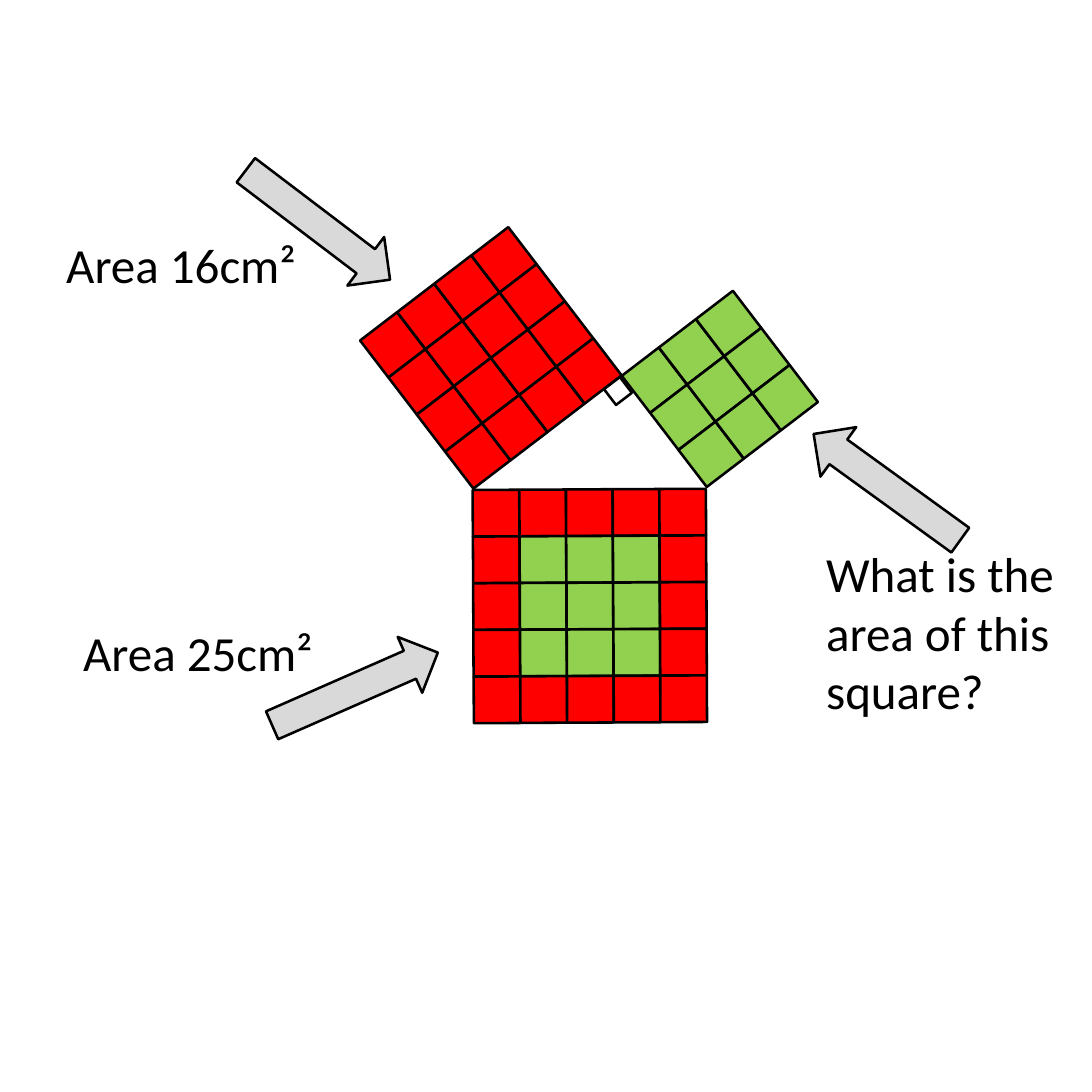
from math import cos, radians, sin

from pptx import Presentation
from pptx.dml.color import RGBColor
from pptx.enum.shapes import MSO_SHAPE
from pptx.enum.text import MSO_AUTO_SIZE
from pptx.util import Pt

PX = 4948  # EMU in one px
SLIDE_SIDE = 1092
CELL = 140 / 3  # the three-cell square is 140 px wide
MARKER = 20
ARROW_LENGTH, ARROW_WIDTH = 181, 61

RED = RGBColor(0xFF, 0x00, 0x00)
GREEN = RGBColor(0x92, 0xD0, 0x50)
GREY = RGBColor(0xD9, 0xD9, 0xD9)
BLACK = RGBColor(0x00, 0x00, 0x00)


def px(length):
    return round(length * PX)


def add_centred(shapes, kind, centre_x, centre_y, width, height, rotation, fill=None):
    """Add a black-outlined shape, turned about its centre."""
    shape = shapes.add_shape(kind, px(centre_x - width / 2), px(centre_y - height / 2),
                             px(width), px(height))
    shape.rotation = rotation
    shape.shadow.inherit = False
    if fill is None:
        shape.fill.background()
    else:
        shape.fill.solid()
        shape.fill.fore_color.rgb = fill
    shape.line.color.rgb = BLACK
    shape.line.width = Pt(1)


presentation = Presentation()
presentation.slide_width = presentation.slide_height = px(SLIDE_SIDE)
slide = presentation.slides.add_slide(presentation.slide_layouts[6])

# Squares on the sides of the triangle: centre, cells per side, tilt, rim and core colours
squares = [
    (720, 389, 3, -37.4, GREEN, GREEN),
    (491, 358, 4, -37.4, RED, RED),
    (590, 606, 5, -0.3, RED, GREEN),
]
diagram = slide.shapes.add_group_shape()
for centre_x, centre_y, count, tilt, rim, core in squares:
    cosine, sine = cos(radians(tilt)), sin(radians(tilt))
    for row in range(count):
        for column in range(count):
            across = (column - (count - 1) / 2) * CELL
            down = (row - (count - 1) / 2) * CELL
            on_rim = row in (0, count - 1) or column in (0, count - 1)
            add_centred(diagram.shapes, MSO_SHAPE.RECTANGLE,
                        centre_x + across * cosine - down * sine,
                        centre_y + across * sine + down * cosine,
                        CELL, CELL, tilt, rim if on_rim else core)

# Right-angle marker
add_centred(diagram.shapes, MSO_SHAPE.RECTANGLE, 618, 391, MARKER, MARKER, -37.4)

# Arrows: centre and direction
for centre_x, centre_y, rotation in [(318, 225, 37.2), (355, 689, 336.3), (887, 487, 215.9)]:
    add_centred(slide.shapes, MSO_SHAPE.RIGHT_ARROW, centre_x, centre_y,
                ARROW_LENGTH, ARROW_WIDTH, rotation, GREY)

# Labels: text, left, top, width, height, wrap
labels = [
    ("Area 16cm²", 48, 225, 270, 78, False),
    ("Area 25cm²", 65, 613, 270, 78, False),
    ("What is the area of this square?", 808, 534, 314, 198, True),
]
font_format = {"name": "Calibri", "size": Pt(19.1)}
for text, left, top, width, height, wrap in labels:
    label = slide.shapes.add_textbox(px(left), px(top), px(width), px(height))
    label.text_frame.word_wrap = wrap
    label.text_frame.auto_size = MSO_AUTO_SIZE.SHAPE_TO_FIT_TEXT
    run = label.text_frame.paragraphs[0].add_run()
    run.text = text
    for attribute, value in font_format.items():
        setattr(run.font, attribute, value)
    run.font.color.rgb = BLACK

presentation.save("out.pptx")
